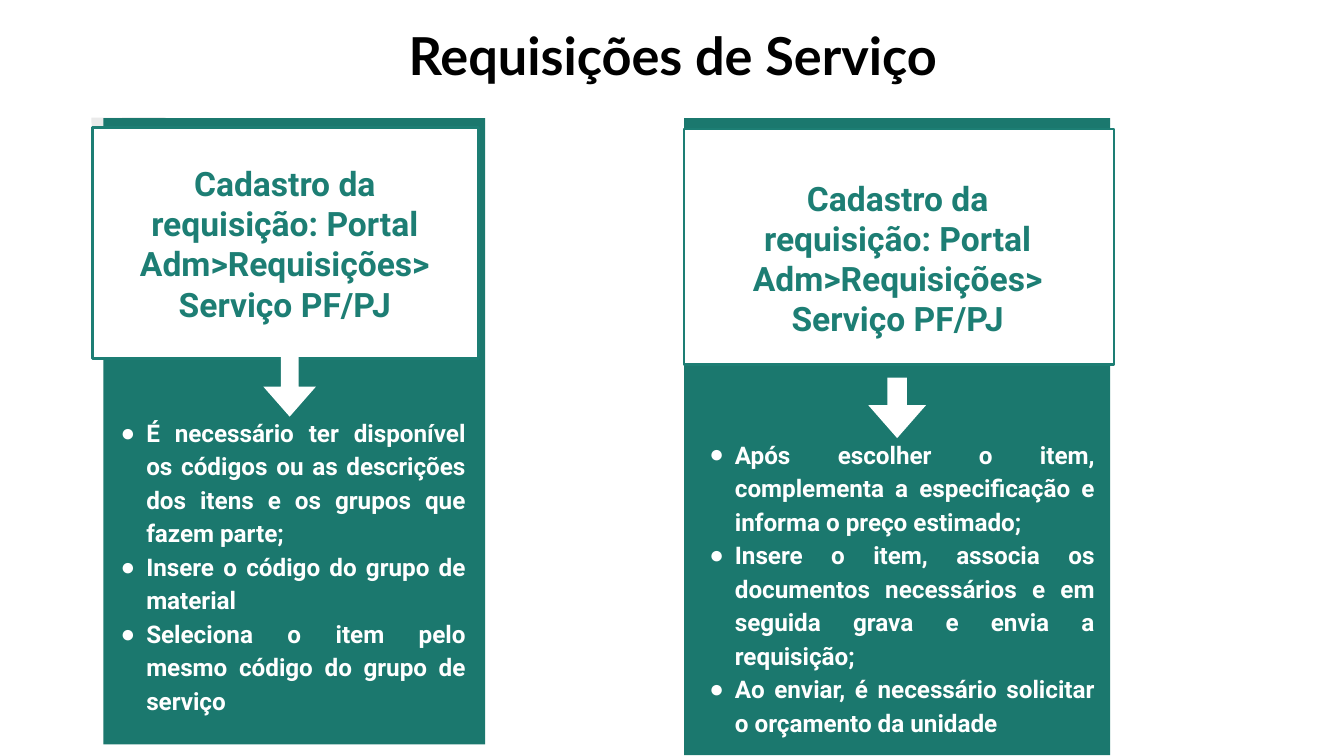
from lxml import etree
from pptx import Presentation
from pptx.dml.color import RGBColor
from pptx.enum.shapes import MSO_SHAPE as Shape
from pptx.enum.text import MSO_ANCHOR as Anchor, PP_ALIGN as Align
from pptx.oxml.ns import qn
from pptx.util import Inches, Pt

# Content
TITLE = "Requisições de Serviço"
HEADING = "Cadastro da requisição: Portal Adm>Requisições> Serviço PF/PJ"
COLUMNS = [
    {
        "panel": (0.77, 0.88, 2.84, 4.66),
        "card": (0.69, 0.95, 2.87, 1.72),
        "arrow": (1.93, 2.68, 0.45, 0.39),
        "list": (0.69, 2.98, 2.87, 2.33),
        "heading": (0.85, 1.11, 2.54, 0.77),
        "items": [
            "É necessário ter disponível os códigos ou as descrições dos itens e os grupos que fazem parte;",
            "Insere o código do grupo de material",
            "Seleciona o item pelo mesmo código do grupo de serviço",
        ],
    },
    {
        "panel": (5.09, 0.88, 3.17, 4.74),
        "card": (5.09, 0.96, 3.2, 1.75),
        "arrow": (6.45, 2.82, 0.45, 0.43),
        "list": (5.07, 3.14, 3.17, 2.25),
        "heading": (5.26, 1.22, 2.84, 0.79),
        "items": [
            "Após escolher o item, complementa a especificação e informa o preço estimado;",
            "Insere o item, associa os documentos necessários e em seguida grava e envia a requisição;",
            "Ao enviar, é necessário solicitar o orçamento da unidade",
        ],
    },
]
PIES = [(0.91, 0.55, 0.65, 0.65), (0.68, 0.33, 1.09, 1.09)]
COLORS = {"panel": "1B786E", "accent": "1D7E74", "white": "FFFFFF",
          "black": "000000", "pie": "424242"}
TITLE_FONT = {"name": "Lato", "size": Pt(28), "bold": True}
HEADING_FONT = {"name": "Roboto", "size": Pt(18), "bold": True}
ITEM_FONT = {"name": "Roboto", "size": Pt(13), "bold": True}


def color(name):
    return RGBColor.from_string(COLORS[name])


def add_block(slide, kind, bounds, fill, line=None, rotation=0, adjustments=()):
    block = slide.shapes.add_shape(kind, *map(Inches, bounds))
    block.shadow.inherit = False
    block.rotation = rotation
    block.fill.solid()
    block.fill.fore_color.rgb = color(fill)
    if line:
        block.line.color.rgb = color(line)
        block.line.width = Pt(1.5)
    else:
        block.line.fill.background()
    for index, value in enumerate(adjustments):
        block.adjustments[index] = value
    return block


def prepare_frame(box, anchor):
    frame = box.text_frame
    frame.word_wrap = True
    frame.vertical_anchor = anchor
    for side in ("left", "top", "right", "bottom"):
        setattr(frame, f"margin_{side}", Inches(0.1))
    return frame


def write(para, text, font, font_color, align):
    para.alignment = align
    span = para.add_run()
    span.text = text
    for key, value in font.items():
        setattr(span.font, key, value)
    span.font.color.rgb = color(font_color)


def add_bullet(para):
    props = para._p.get_or_add_pPr()
    props.set("marL", str(Inches(0.3)))
    props.set("indent", str(Inches(-0.19)))
    bullet_color = etree.SubElement(props, qn("a:buClr"))
    etree.SubElement(bullet_color, qn("a:srgbClr"), val=COLORS["white"])
    etree.SubElement(props, qn("a:buFont"), typeface="Arial")
    etree.SubElement(props, qn("a:buChar"), char="●")


def add_text_box(slide, bounds):
    box = slide.shapes.add_textbox(*map(Inches, bounds))
    return prepare_frame(box, Anchor.TOP)


def add_column(slide, column):
    add_block(slide, Shape.RECTANGLE, column["panel"], "panel")
    add_block(slide, Shape.RECTANGLE, column["card"], "white", line="accent")
    add_block(slide, Shape.RIGHT_ARROW, column["arrow"], "white",
              rotation=90, adjustments=(0.34, 0.57))

    # Bulleted steps
    frame = add_text_box(slide, column["list"])
    for index, item in enumerate(column["items"]):
        para = frame.add_paragraph() if index else frame.paragraphs[0]
        para.line_spacing = 1.15
        add_bullet(para)
        write(para, item, ITEM_FONT, "white", Align.JUSTIFY)

    # Card heading
    frame = add_text_box(slide, column["heading"])
    write(frame.paragraphs[0], HEADING, HEADING_FONT, "accent", Align.CENTER)


def main():
    # Widescreen page, 16:9
    deck = Presentation()
    deck.slide_width = Inches(10)
    deck.slide_height = deck.slide_width * 9 // 16
    page = deck.slides.add_slide(deck.slide_layouts[5])

    # Faint quarter circles behind the left column
    for bounds in PIES:
        pie = add_block(page, Shape.PIE, bounds, "pie", rotation=270,
                        adjustments=(108, 162))
        tint = pie.fill._xPr.find(".//" + qn("a:srgbClr"))
        etree.SubElement(tint, qn("a:alpha"), val="11000")

    # Title
    title = page.shapes.title
    title.left, title.top, title.width, title.height = map(
        Inches, (1.16, 0, 7.69, 0.86))
    frame = prepare_frame(title, Anchor.MIDDLE)
    frame.margin_bottom = Inches(0.14)
    write(frame.paragraphs[0], TITLE, TITLE_FONT, "black", Align.CENTER)

    # Two columns of steps
    for column in COLUMNS:
        add_column(page, column)

    deck.save("out.pptx")


if __name__ == "__main__":
    main()
